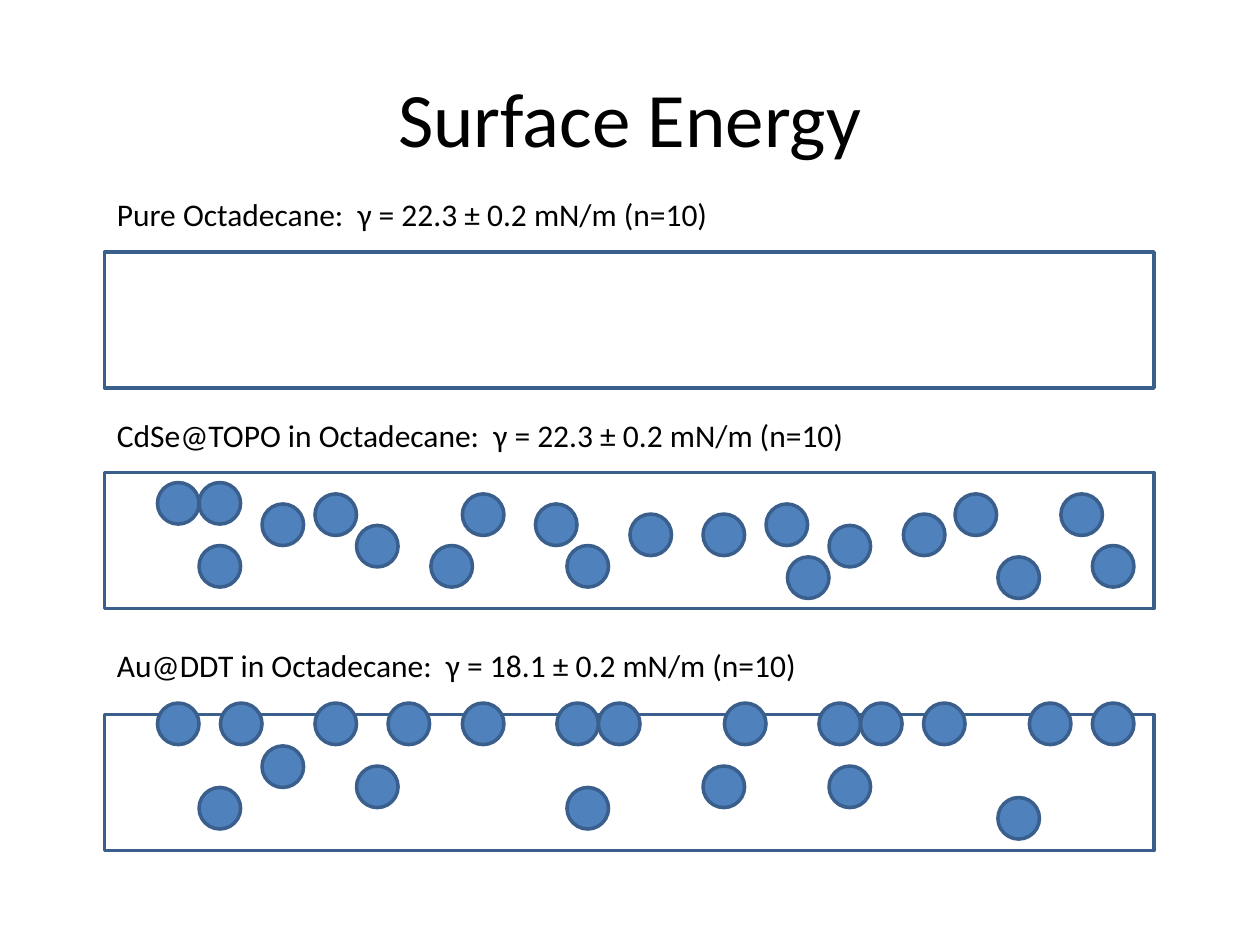
"""Build a slide comparing the surface energy of three octadecane samples."""
from dataclasses import dataclass

import pptx
import pptx.dml.color
import pptx.enum.shapes
import pptx.enum.text
import pptx.util

Inches = pptx.util.Inches
Shape = pptx.enum.shapes.MSO_SHAPE
Align = pptx.enum.text.PP_ALIGN
Anchor = pptx.enum.text.MSO_ANCHOR

PANEL_LEFT, PANEL_WIDTH, PANEL_HEIGHT = 0.83, 8.33, 1.08
LABEL_HEIGHT = 0.4
PARTICLE_SIZE = 0.33
SURFACE_TOP = 5.58
SURFACE_LEFTS = (1.25, 1.75, 2.5, 3.08, 3.67, 4.42, 4.75,
                 5.75, 6.5, 6.83, 7.33, 8.17, 8.67)


@dataclass(frozen=True)
class Sample:
    label: str
    label_top: float
    panel_top: float
    particles: tuple[tuple[float, float], ...] = ()


SAMPLES = (
    Sample("Pure Octadecane:  γ = 22.3 ± 0.2 mN/m (n=10)", 1.5, 2),
    Sample(
        "CdSe@TOPO in Octadecane:  γ = 22.3 ± 0.2 mN/m (n=10)", 3.25, 3.75,
        ((1.25, 3.83), (1.58, 3.83), (1.58, 4.33), (2.08, 4), (2.5, 3.92),
         (2.83, 4.17), (3.42, 4.33), (3.67, 3.92), (4.25, 4), (4.5, 4.33),
         (5, 4.08), (5.58, 4.08), (6.08, 4), (6.25, 4.42), (6.58, 4.17),
         (7.17, 4.08), (7.58, 3.92), (7.92, 4.42), (8.42, 3.92), (8.67, 4.33)),
    ),
    Sample(
        "Au@DDT in Octadecane:  γ = 18.1 ± 0.2 mN/m (n=10)", 5.08, 5.67,
        tuple((left, SURFACE_TOP) for left in SURFACE_LEFTS)
        + ((1.58, 6.25), (2.08, 5.92), (2.83, 6.08), (4.5, 6.25),
           (5.58, 6.08), (6.58, 6.08), (7.92, 6.33)),
    ),
)


def color(value: str) -> pptx.dml.color.RGBColor:
    return pptx.dml.color.RGBColor.from_string(value)


def add_text(page, text: str, left: float, top: float, width: float, height: float,
             *, size: float = 18, align=Align.LEFT, anchor=Anchor.TOP) -> None:
    box = page.shapes.add_textbox(Inches(left), Inches(top), Inches(width), Inches(height))
    frame = box.text_frame
    frame.word_wrap = True
    frame.vertical_anchor = anchor
    para = frame.paragraphs[0]
    para.alignment = align
    span = para.add_run()
    span.text = text
    span.font.name = "Calibri"
    span.font.size = pptx.util.Pt(size)
    span.font.color.rgb = color("000000")


def add_outlined(page, kind, left: float, top: float, width: float, height: float,
                 fill: str) -> None:
    shape = page.shapes.add_shape(kind, Inches(left), Inches(top), Inches(width), Inches(height))
    shape.shadow.inherit = False
    shape.fill.solid()
    shape.fill.fore_color.rgb = color(fill)
    shape.line.color.rgb = color("3A5F8C")
    shape.line.width = pptx.util.Pt(2)


def add_sample(page, sample: Sample) -> None:
    add_outlined(page, Shape.RECTANGLE, PANEL_LEFT, sample.panel_top,
                 PANEL_WIDTH, PANEL_HEIGHT, "FFFFFF")
    for left, top in sample.particles:
        add_outlined(page, Shape.OVAL, left, top, PARTICLE_SIZE, PARTICLE_SIZE, "4F81BD")
    add_text(page, sample.label, PANEL_LEFT, sample.label_top, PANEL_WIDTH, LABEL_HEIGHT)


def main() -> None:
    deck = pptx.Presentation()
    deck.slide_width, deck.slide_height = Inches(10), Inches(7.5)
    page = deck.slides.add_slide(deck.slide_layouts[6])
    add_text(page, "Surface Energy", 0.5, 0.3, 9, 1.25,
             size=44, align=Align.CENTER, anchor=Anchor.MIDDLE)
    for sample in SAMPLES:
        add_sample(page, sample)
    deck.save("out.pptx")


if __name__ == "__main__":
    main()
